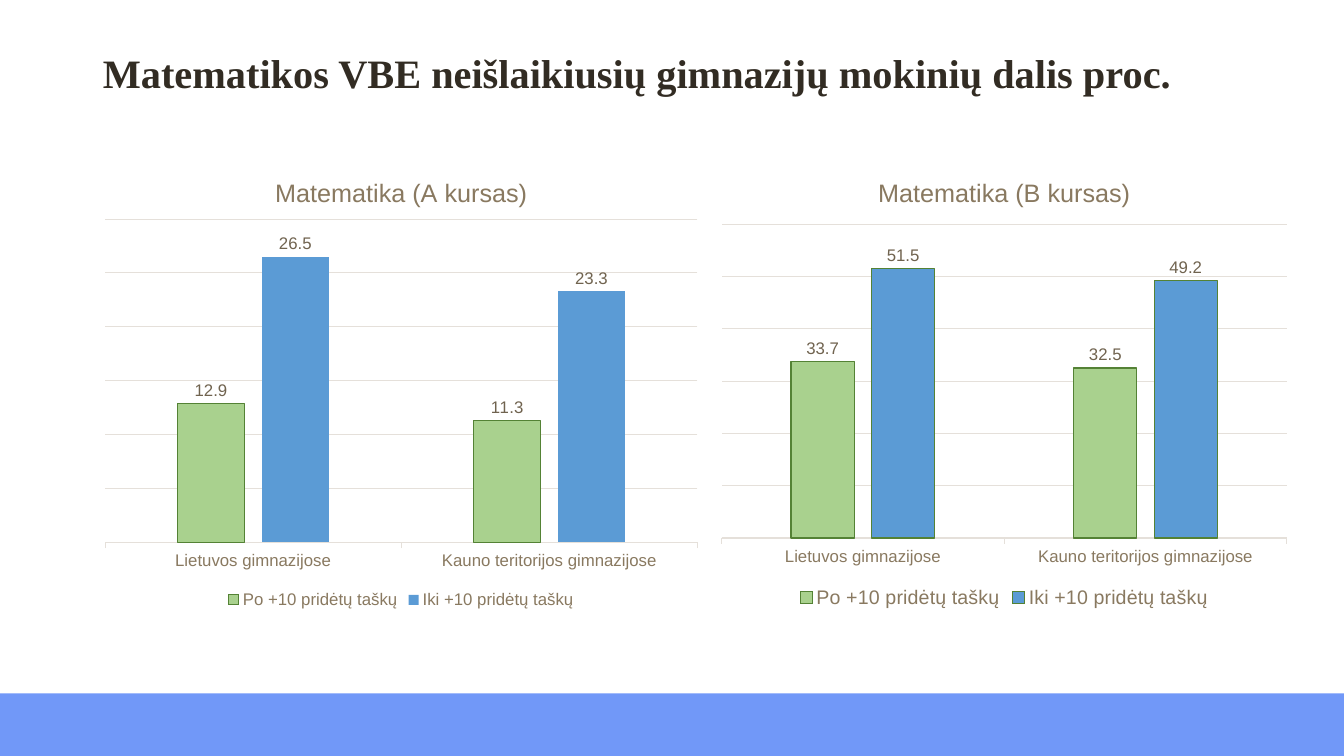
from dataclasses import dataclass

from lxml import etree
from pptx import Presentation
from pptx.chart.data import CategoryChartData
from pptx.dml.color import RGBColor
from pptx.enum.chart import XL_CHART_TYPE, XL_LABEL_POSITION, XL_LEGEND_POSITION, XL_TICK_MARK
from pptx.enum.shapes import MSO_SHAPE
from pptx.enum.text import MSO_ANCHOR, PP_ALIGN
from pptx.oxml import parse_xml
from pptx.oxml.ns import nsdecls, qn
from pptx.util import Inches, Pt

COLUMNS = XL_CHART_TYPE.COLUMN_CLUSTERED
OUTSIDE_END = XL_LABEL_POSITION.OUTSIDE_END
BOTTOM = XL_LEGEND_POSITION.BOTTOM
TICK_OUTSIDE, TICK_NONE = XL_TICK_MARK.OUTSIDE, XL_TICK_MARK.NONE
RECTANGLE = MSO_SHAPE.RECTANGLE
MIDDLE = MSO_ANCHOR.MIDDLE
LEFT = PP_ALIGN.LEFT


@dataclass(frozen=True)
class Theme:
    band: str = "7198F8"
    dark: str = "322C23"
    muted: str = "897960"
    label: str = "70634F"
    grid: str = "E5E0DA"
    green: str = "A9D18E"
    blue: str = "5B9BD5"
    outline: str = "548235"
    heading_font: str = "Times New Roman"
    chart_font: str = "Arial"
    heading_size: float = 28.8
    chart_title_size: int = 18
    base_size: int = 10
    label_size: int = 12
    line_width: float = 0.75


theme = Theme()


def style_font(font, name, size, color, bold=False):
    font.name = name
    font.size = Pt(size)
    font.bold = bold
    font.color.rgb = RGBColor.from_string(color)


def style_line(line, color):
    line.width = Pt(theme.line_width)
    line.color.rgb = RGBColor.from_string(color)


presentation = Presentation()
presentation.slide_width = Inches(13.33)
presentation.slide_height = Inches(7.5)
slide = presentation.slides.add_slide(presentation.slide_layouts[5])

band_height = Inches(0.62)
band = slide.shapes.add_shape(
    RECTANGLE, 0, presentation.slide_height - band_height, presentation.slide_width, band_height
)
band.shadow.inherit = False
band.fill.solid()
band.fill.fore_color.rgb = RGBColor.from_string(theme.band)
band.line.fill.background()

left_margin = Inches(0.92)
title = slide.shapes.title
title.left, title.top = left_margin, Inches(0.4)
title.width, title.height = Inches(11.5), Inches(0.69)
title.text_frame.vertical_anchor = MIDDLE
title.text_frame.word_wrap = True
paragraph = title.text_frame.paragraphs[0]
paragraph.alignment = LEFT
paragraph.line_spacing = 0.9
run = paragraph.add_run()
run.text = "Matematikos VBE neišlaikiusių gimnazijų mokinių dalis proc."
style_font(run.font, theme.heading_font, theme.heading_size, theme.dark, True)

categories = ["Lietuvos gimnazijose", "Kauno teritorijos gimnazijose"]
series_names = ["Po +10 pridėtų taškų", "Iki +10 pridėtų taškų"]
series_fills = [theme.green, theme.blue]
courses = [
    {
        "title": "Matematika (A kursas)",
        "values": [(12.9, 11.3), (26.5, 23.3)],
        "outlines": [True, False],
        "width": 6.12,
        "maximum": 30,
        "legend_size": 12,
        "plot": {"x": 0.02, "y": 0.136, "w": 0.96, "h": 0.709},
    },
    {
        "title": "Matematika (B kursas)",
        "values": [(33.7, 32.5), (51.5, 49.2)],
        "outlines": [True, True],
        "width": 5.84,
        "maximum": 60,
        "legend_size": 14,
        "plot": {"x": 0.02, "y": 0.147, "w": 0.96, "h": 0.689},
    },
]

chart_left = left_margin
for course in courses:
    chart_data = CategoryChartData(number_format="0.0")
    chart_data.categories = categories
    for name, values in zip(series_names, course["values"]):
        chart_data.add_series(name, values)
    chart_width = Inches(course["width"])
    chart = slide.shapes.add_chart(
        COLUMNS, chart_left, Inches(1.56), chart_width, Inches(4.52), chart_data
    ).chart
    chart_left += chart_width
    style_font(chart.font, theme.chart_font, theme.base_size, theme.dark)

    chart.has_title = True
    title_run = chart.chart_title.text_frame.paragraphs[0].add_run()
    title_run.text = course["title"]
    style_font(title_run.font, theme.chart_font, theme.chart_title_size, theme.muted)

    chart.has_legend = True
    chart.legend.position = BOTTOM
    chart.legend.include_in_layout = False
    style_font(chart.legend.font, theme.chart_font, course["legend_size"], theme.muted)

    category_axis = chart.category_axis
    category_axis.major_tick_mark = TICK_OUTSIDE
    category_axis.minor_tick_mark = TICK_NONE
    style_line(category_axis.format.line, theme.grid)
    style_font(category_axis.tick_labels.font, theme.chart_font, theme.label_size, theme.muted)

    value_axis = chart.value_axis
    value_axis.minimum_scale = 0
    value_axis.maximum_scale = course["maximum"]
    value_axis.major_unit = course["maximum"] / 6
    value_axis.tick_labels.number_format = "0.0"
    value_axis.tick_labels.number_format_is_linked = False
    value_axis.has_major_gridlines = True
    style_line(value_axis.major_gridlines.format.line, theme.grid)
    value_axis.visible = False

    plot = chart.plots[0]
    plot.gap_width = 219
    plot.overlap = -27
    plot.vary_by_categories = False
    for series, fill, outlined in zip(plot.series, series_fills, course["outlines"]):
        series.format.fill.solid()
        series.format.fill.fore_color.rgb = RGBColor.from_string(fill)
        if outlined:
            style_line(series.format.line, theme.outline)
        else:
            series.format.line.fill.background()
        labels = series.data_labels
        labels.show_value = True
        labels.position = OUTSIDE_END
        labels.number_format = "0.0"
        labels.number_format_is_linked = False
        style_font(labels.font, theme.chart_font, theme.label_size, theme.label)

    plot_area = chart.element.find(".//" + qn("c:plotArea"))
    for layout in plot_area.findall(qn("c:layout")):
        plot_area.remove(layout)
    layout = parse_xml(f"<c:layout {nsdecls('c')}><c:manualLayout/></c:layout>")
    settings = {"layoutTarget": "inner", "xMode": "edge", "yMode": "edge", **course["plot"]}
    for tag, value in settings.items():
        etree.SubElement(layout[0], qn(f"c:{tag}")).set("val", str(value))
    plot_area.insert(0, layout)

presentation.save("out.pptx")
